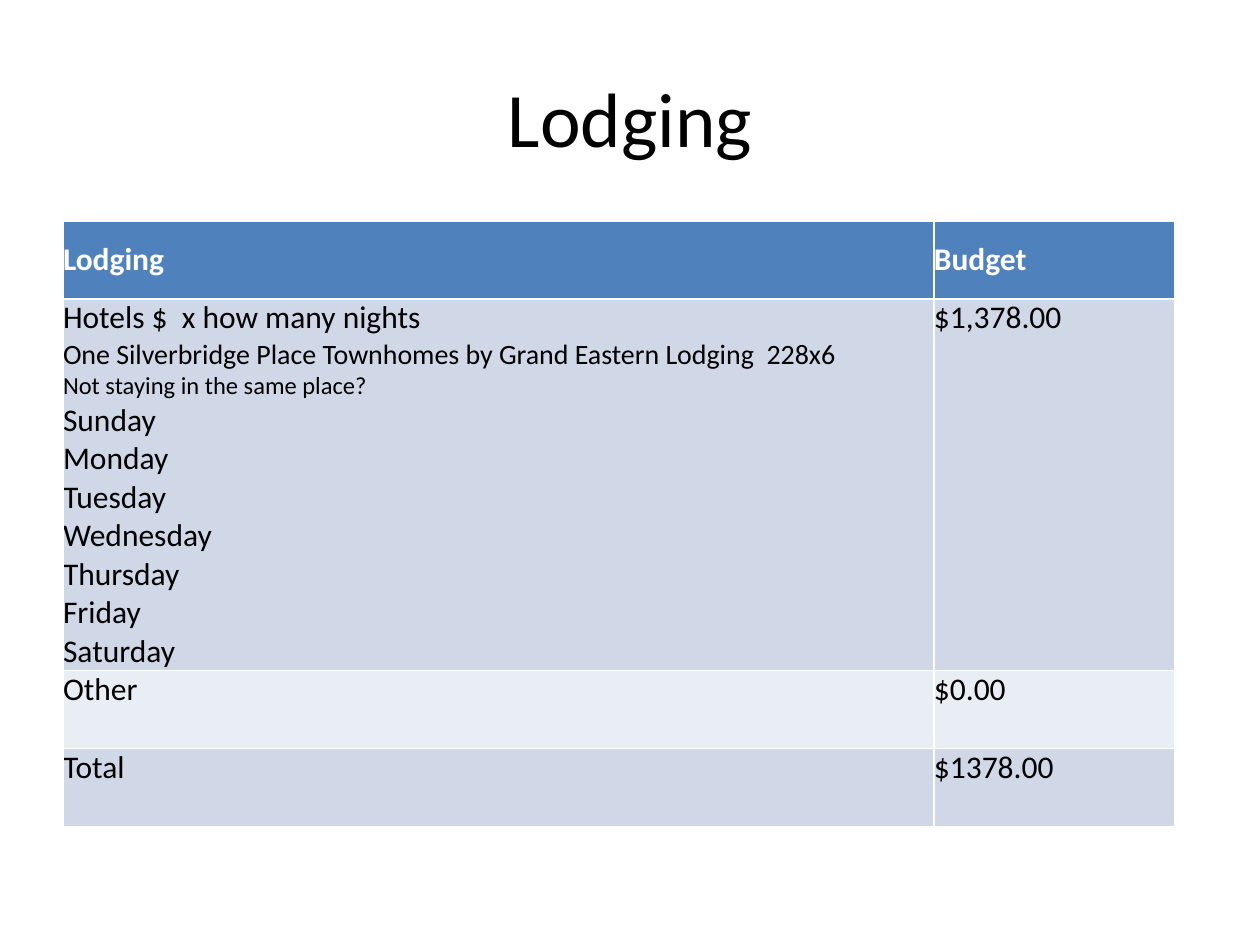
from pptx import Presentation
from pptx.dml.color import RGBColor
from pptx.enum.text import MSO_ANCHOR, PP_ALIGN
from pptx.util import Emu, Pt

MIDDLE, TOP = MSO_ANCHOR.MIDDLE, MSO_ANCHOR.TOP
CENTER = PP_ALIGN.CENTER
BLACK = RGBColor(0x00, 0x00, 0x00)
WHITE = RGBColor(0xFF, 0xFF, 0xFF)
HEADER_BLUE = RGBColor(0x4F, 0x81, 0xBD)
BANDS = [RGBColor(0xD0, 0xD8, 0xE8), RGBColor(0xE9, 0xED, 0xF4)]
FONT = "Calibri"
BODY_SIZE = 18

TITLE = "Lodging"
LODGING_LINES = [
    "Hotels $  x how many nights",
    "One Silverbridge Place Townhomes by Grand Eastern Lodging  228x6",
    "Not staying in the same place?",
    "Sunday", "Monday", "Tuesday", "Wednesday", "Thursday", "Friday", "Saturday",
]
SMALL_SIZES = {LODGING_LINES[1]: 16, LODGING_LINES[2]: 14}
ROWS = [
    (["Lodging"], ["Budget"]),
    (LODGING_LINES, ["$1,378.00"]),
    (["Other"], ["$0.00"]),
    (["Total"], ["$1378.00"]),
]

TITLE_BOX = (63, 38, 1134, 158)
TABLE_LEFT, TABLE_TOP = 63, 221
COLUMN_WIDTHS = [871, 241]
ROW_HEIGHTS = [78, 363, 78, 78]


def px(length):
    return Emu(round(length * 914400 / 126))


def format_paragraph(para, size, color, bold=False):
    for span in para.runs:
        span.font.name = FONT
        span.font.size = Pt(size)
        span.font.bold = bold
        span.font.color.rgb = color


def fill_cell(cell, lines, row_index):
    is_header = row_index == 0
    cell.margin_left = cell.margin_right = cell.margin_top = cell.margin_bottom = 0
    cell.vertical_anchor = MIDDLE if is_header else TOP
    cell.fill.solid()
    cell.fill.fore_color.rgb = HEADER_BLUE if is_header else BANDS[(row_index - 1) % 2]
    cell.text_frame.text = "\n".join(lines)
    for para in cell.text_frame.paragraphs:
        size = SMALL_SIZES.get(para.text, BODY_SIZE)
        format_paragraph(para, size, WHITE if is_header else BLACK, is_header)


def add_title(page):
    title = page.shapes.title
    title.left, title.top, title.width, title.height = map(px, TITLE_BOX)
    title.text_frame.text = TITLE
    title.text_frame.vertical_anchor = MIDDLE
    para = title.text_frame.paragraphs[0]
    para.alignment = CENTER
    format_paragraph(para, 44, BLACK)


def add_budget_table(page):
    table = page.shapes.add_table(
        len(ROWS), len(COLUMN_WIDTHS), px(TABLE_LEFT), px(TABLE_TOP),
        px(sum(COLUMN_WIDTHS)), px(sum(ROW_HEIGHTS))).table
    for column, width in zip(table.columns, COLUMN_WIDTHS):
        column.width = px(width)
    for row_index, (row, height, contents) in enumerate(zip(table.rows, ROW_HEIGHTS, ROWS)):
        row.height = px(height)
        for cell, lines in zip(row.cells, contents):
            fill_cell(cell, lines, row_index)


def main():
    deck = Presentation()
    deck.slide_width, deck.slide_height = px(1260), px(945)
    page = deck.slides.add_slide(deck.slide_layouts[5])
    add_title(page)
    add_budget_table(page)
    deck.save("out.pptx")


if __name__ == "__main__":
    main()
